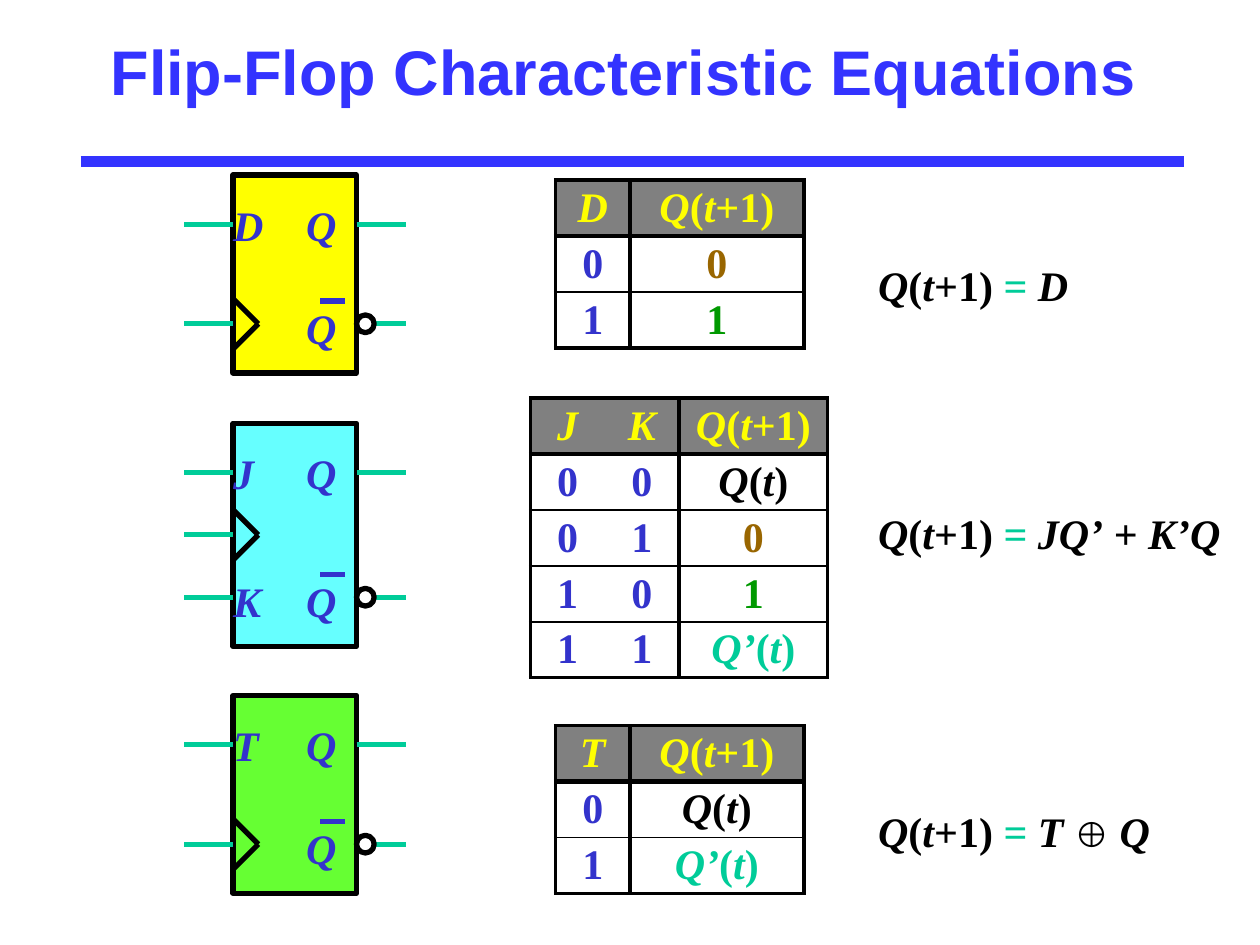
import itertools

import pptx
import pptx.dml.color
import pptx.enum.shapes
import pptx.enum.text
import pptx.oxml.ns
import pptx.util
from lxml import etree
from pptx.util import Inches

SERIF = "Times New Roman"
BLACK, BLUE, GREEN = "000000", "3333CC", "00CC99"
RESULT_COLORS = {"0": "996600", "1": "009900", "Q(t)": BLACK, "Q’(t)": GREEN}
NEXT = "Q(t+1)"


def rgb(value):
    return pptx.dml.color.RGBColor.from_string(value)


def add_line(shapes, x1, y1, x2, y2, color, width=3):
    line = shapes.add_connector(
        pptx.enum.shapes.MSO_CONNECTOR.STRAIGHT,
        Inches(x1), Inches(y1), Inches(x2), Inches(y2))
    line.line.color.rgb = rgb(color)
    line.line.width = pptx.util.Pt(width)
    sp_pr = line._element.find(pptx.oxml.ns.qn("p:spPr"))
    etree.SubElement(sp_pr, pptx.oxml.ns.qn("a:effectLst"))
    return line


def add_outlined(shapes, kind, x, y, w, h, fill):
    s = shapes.add_shape(kind, Inches(x), Inches(y), Inches(w), Inches(h))
    s.shadow.inherit = False
    s.fill.solid()
    s.fill.fore_color.rgb = rgb(fill)
    s.line.color.rgb = rgb(BLACK)
    s.line.width = pptx.util.Pt(3)
    return s


def set_font(p, name, size, color):
    p.font.name = name
    p.font.size = pptx.util.Pt(size)
    p.font.bold = True
    p.font.color.rgb = rgb(color)


def write_math(p, text, color):
    set_font(p, SERIF, 24, color)

    def char_style(ch):
        return ch.isalpha() or ch == "’", ch == "=", ch == "⊕"

    for (italic, equals, oplus), chars in itertools.groupby(text, char_style):
        r = p.add_run()
        r.text = "".join(chars)
        r.font.italic = italic
        if equals:
            r.font.color.rgb = rgb(GREEN)
        if oplus:
            r.font.size = pptx.util.Pt(20)


def add_math(shapes, text, x, y, w, h, color):
    tf = shapes.add_textbox(Inches(x), Inches(y), Inches(w), Inches(h)).text_frame
    tf.word_wrap = True
    tf.margin_left = tf.margin_right = tf.margin_top = tf.margin_bottom = 0
    write_math(tf.paragraphs[0], text, color)
    return tf.paragraphs[0]


def add_title(shapes, x, y, w, h):
    tf = shapes.add_textbox(Inches(x), Inches(y), Inches(w), Inches(h)).text_frame
    tf.word_wrap = True
    tf.vertical_anchor = pptx.enum.text.MSO_ANCHOR.MIDDLE
    p = tf.paragraphs[0]
    p.text = "Flip-Flop Characteristic Equations"
    set_font(p, "Arial", 36, "3333FF")
    add_line(shapes, 0.64, 1.28, 9.4, 1.28, "3333FF", 6)


def add_flip_flop(shapes, x, y, w, h, fill, inputs):
    group = shapes.add_group_shape().shapes
    kinds = pptx.enum.shapes.MSO_SHAPE
    right, pin = x + w, 0.39
    upper, lower = y + pin, y + h - pin
    clock = y + h / 2 if len(inputs) == 2 else lower
    box = add_outlined(group, kinds.RECTANGLE, x, y, w, h, fill)

    for dy in (-0.2, 0.2):
        add_line(group, x, clock + dy, x + 0.2, clock, BLACK)
    for pin_y in sorted({upper, clock, lower}):
        lead = add_line(group, x, pin_y, x - pin, pin_y, GREEN)
        if pin_y not in (upper, lower):
            lead.begin_connect(box, 1)
    for pin_y in (upper, lower):
        add_line(group, right, pin_y, right + pin, pin_y, GREEN)
    add_outlined(group, kinds.OVAL, right, lower - 0.07, 0.14, 0.14, "FFFFFF")

    label_tops = (upper - 0.2, lower - 0.17)
    for name, top in zip(inputs, label_tops):
        add_math(group, name, x, top, pin, 0.36, BLUE)
    for top in label_tops:
        add_math(group, "Q", right - 0.4, top, pin, 0.36, BLUE)
    add_line(group, right - 0.29, lower - 0.18, right - 0.09, lower - 0.18, BLUE)


def set_border(cell, side, width):
    qn = pptx.oxml.ns.qn
    tc_pr = cell._tc.get_or_add_tcPr()
    ln = etree.SubElement(tc_pr, qn("a:ln" + side), w=str(int(pptx.util.Pt(width))))
    if width:
        fill = etree.SubElement(ln, qn("a:solidFill"))
        etree.SubElement(fill, qn("a:srgbClr"), val=BLACK)
    else:
        etree.SubElement(ln, qn("a:noFill"))


def add_truth_table(shapes, x, y, col_widths, rows):
    row_height = 0.444
    n_rows, n_cols = len(rows), len(col_widths)
    frame = shapes.add_table(
        n_rows, n_cols, Inches(x), Inches(y),
        Inches(sum(col_widths)), Inches(row_height * n_rows))
    table = frame.table
    table.first_row = table.horz_banding = False
    for column, width in zip(table.columns, col_widths):
        column.width = Inches(width)
    for row in table.rows:
        row.height = Inches(row_height)

    v_edges = [2.25] + [0] * (n_cols - 2) + [3, 2.25]
    h_edges = [2.25, 3] + [1] * (n_rows - 2) + [2.25]
    for i, j in itertools.product(range(n_rows), range(n_cols)):
        cell, text = table.cell(i, j), rows[i][j]
        widths = (v_edges[j], v_edges[j + 1], h_edges[i], h_edges[i + 1])
        for side, width in zip("LRTB", widths):
            set_border(cell, side, width)
        if i == 0:
            cell.fill.solid()
            cell.fill.fore_color.rgb = rgb("808080")
            color = "FFFF00"
        else:
            cell.fill.background()
            color = RESULT_COLORS[text] if j == n_cols - 1 else BLUE
        cell.margin_left = cell.margin_right = 0
        cell.margin_top = cell.margin_bottom = 0
        cell.vertical_anchor = pptx.enum.text.MSO_ANCHOR.MIDDLE
        p = cell.text_frame.paragraphs[0]
        p.alignment = pptx.enum.text.PP_ALIGN.CENTER
        write_math(p, text, color)


def add_equation(shapes, text, x, y, w, h):
    add_math(shapes, text, x, y, w, h, BLACK).line_spacing = 1.2


def main():
    prs = pptx.Presentation()
    prs.slide_width, prs.slide_height = Inches(10), Inches(7.5)
    shapes = prs.slides.add_slide(prs.slide_layouts[6]).shapes
    add_title(shapes, 0.78, 0, 8.5, 1.12)

    narrow, wide = (4.41, (0.59, 1.38)), (4.21, (0.59, 0.59, 1.18))
    flip_flops = [
        (1.39, 1.57, "FFFF00", "D", narrow, 1.43,
         [("D", NEXT), ("0", "0"), ("1", "1")],
         "Q(t+1) = D", 1.98),
        (3.36, 1.77, "66FFFF", "JK", wide, 3.16,
         [("J", "K", NEXT), ("0", "0", "Q(t)"), ("0", "1", "0"),
          ("1", "0", "1"), ("1", "1", "Q’(t)")],
         "Q(t+1) = JQ’ + K’Q", 3.95),
        (5.52, 1.57, "66FF33", "T", narrow, 5.76,
         [("T", NEXT), ("0", "Q(t)"), ("1", "Q’(t)")],
         "Q(t+1) = T ⊕ Q", 6.31),
    ]
    for top, height, fill, inputs, layout, table_top, rows, equation, eq_top in flip_flops:
        add_flip_flop(shapes, 1.85, top, 0.98, height, fill, inputs)
        add_truth_table(shapes, layout[0], table_top, layout[1], rows)
        add_equation(shapes, equation, 6.97, eq_top, 2.76, 0.48)
    prs.save("out.pptx")


if __name__ == "__main__":
    main()
